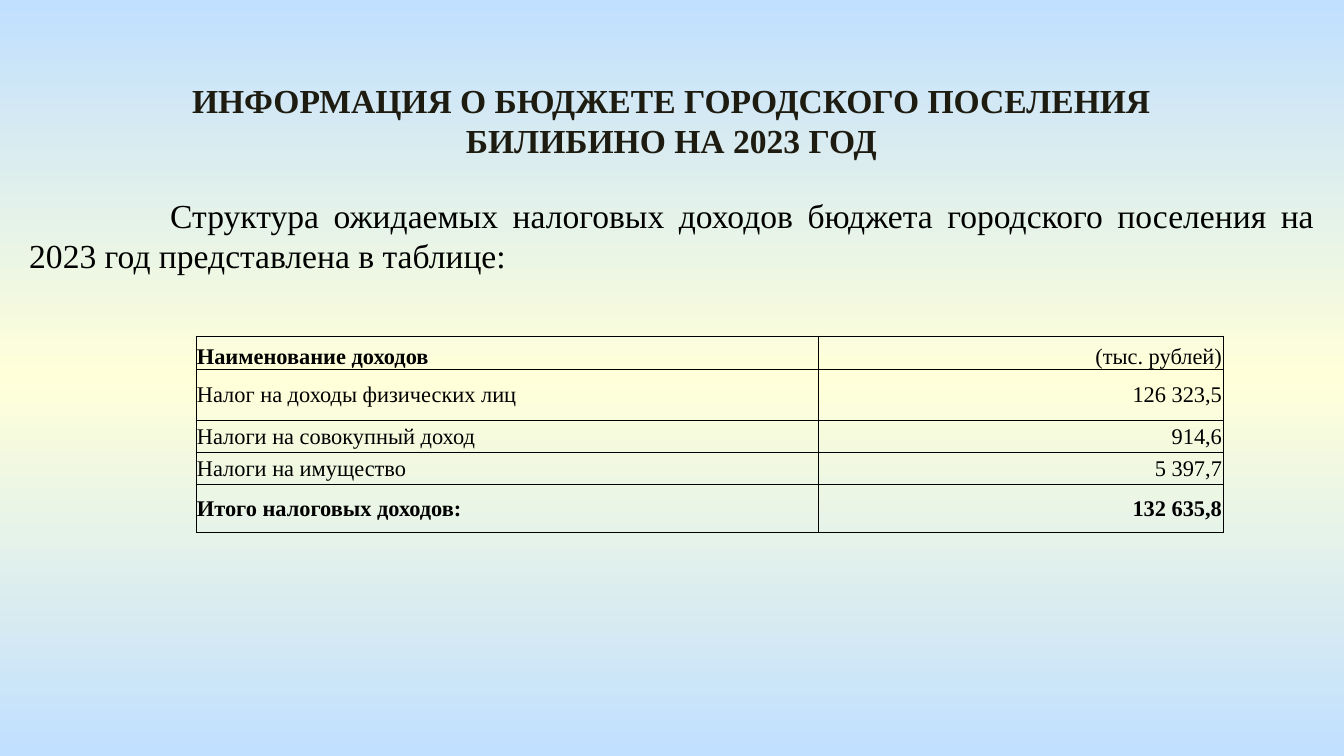
from lxml.etree import SubElement
from copy import deepcopy
from pptx import Presentation
from pptx.dml.color import RGBColor
from pptx.enum.text import MSO_ANCHOR as Anchor, PP_ALIGN as Align
from pptx.oxml.ns import qn
from pptx.util import Pt

EMU_PER_PX = 914400 / 134.4
FONT = "Times New Roman"
BLACK = "000000"


def px(length):
    return round(length * EMU_PER_PX)


def color(code):
    return RGBColor.from_string(code)


def add_span(para, text, size, code=BLACK, bold=False):
    span = para.add_run()
    span.text = text
    span.font.name = FONT
    span.font.size = Pt(size)
    span.font.bold = bold
    span.font.color.rgb = color(code)


def paint_background(page, codes):
    fill = page.background.fill
    fill.gradient()
    fill.gradient_angle = 270
    first_stop = next(page.element.iter(qn("a:gs")))
    first_stop.addnext(deepcopy(first_stop))
    for index, (stop, code) in enumerate(zip(fill.gradient_stops, codes)):
        stop.position = index / (len(codes) - 1)
        stop.color.rgb = color(code)


def add_paragraph_box(page, box, text, align, code=BLACK, bold=False, indent=0):
    shape = page.shapes.add_textbox(*map(px, box))
    frame = shape.text_frame
    frame.word_wrap = True
    para = frame.paragraphs[0]
    para.alignment = align
    if indent:
        para._p.get_or_add_pPr().set("indent", str(px(indent)))
    add_span(para, text, 18, code, bold)


def add_borders(cell, code, width):
    properties = cell._tc.get_or_add_tcPr()
    for index, side in enumerate(("lnL", "lnR", "lnT", "lnB")):
        line = SubElement(properties, qn(f"a:{side}"), w=str(Pt(width)))
        solid = SubElement(line, qn("a:solidFill"))
        SubElement(solid, qn("a:srgbClr"), val=code)
        properties.insert(index, line)


def fill_cell(cell, text, align, anchor, bold):
    cell.fill.background()
    cell.vertical_anchor = anchor
    cell.margin_left = cell.margin_right = cell.margin_top = px(1)
    cell.margin_bottom = 0
    para = cell.text_frame.paragraphs[0]
    para.alignment = align
    add_span(para, text, 12, bold=bold)
    add_borders(cell, BLACK, 0.5)


def add_income_table(page, box, widths, heights, rows):
    table = page.shapes.add_table(len(rows), len(widths), *map(px, box)).table
    table.first_row = table.horz_banding = False
    for column, width in zip(table.columns, widths):
        column.width = px(width)
    for index, (height, values) in enumerate(zip(heights, rows)):
        table.rows[index].height = px(height)
        is_header = index == 0
        is_total = index == len(rows) - 1
        anchor = Anchor.BOTTOM if is_header else Anchor.MIDDLE
        name, amount = table.rows[index].cells
        fill_cell(name, values[0], Align.JUSTIFY, anchor, is_header or is_total)
        fill_cell(amount, values[1], Align.RIGHT, anchor, is_total)


def main():
    deck = Presentation()
    deck.slide_width, deck.slide_height = px(1344), px(756)
    page = deck.slides.add_slide(deck.slide_layouts[6])
    paint_background(page, ("C1E0FF", "FFFFD9", "C1E0FF"))
    add_paragraph_box(
        page, (152, 73, 1039, 95),
        "ИНФОРМАЦИЯ О БЮДЖЕТЕ ГОРОДСКОГО ПОСЕЛЕНИЯ БИЛИБИНО НА 2023 ГОД",
        Align.CENTER, "1E1C11", bold=True)
    add_paragraph_box(
        page, (16, 188, 1312, 95),
        "Структура ожидаемых налоговых доходов бюджета городского поселения "
        "на 2023 год представлена в таблице:",
        Align.JUSTIFY, indent=141)
    rows = (
        ("Наименование доходов", "(тыс. рублей)"),
        ("Налог на доходы физических лиц", "126 323,5"),
        ("Налоги на совокупный доход", "914,6"),
        ("Налоги на имущество", "5 397,7"),
        ("Итого налоговых доходов:", "132 635,8"),
    )
    add_income_table(page, (196, 336, 1027, 197), (622, 405),
                     (33, 52, 32, 32, 48), rows)
    deck.save("out.pptx")


if __name__ == "__main__":
    main()
